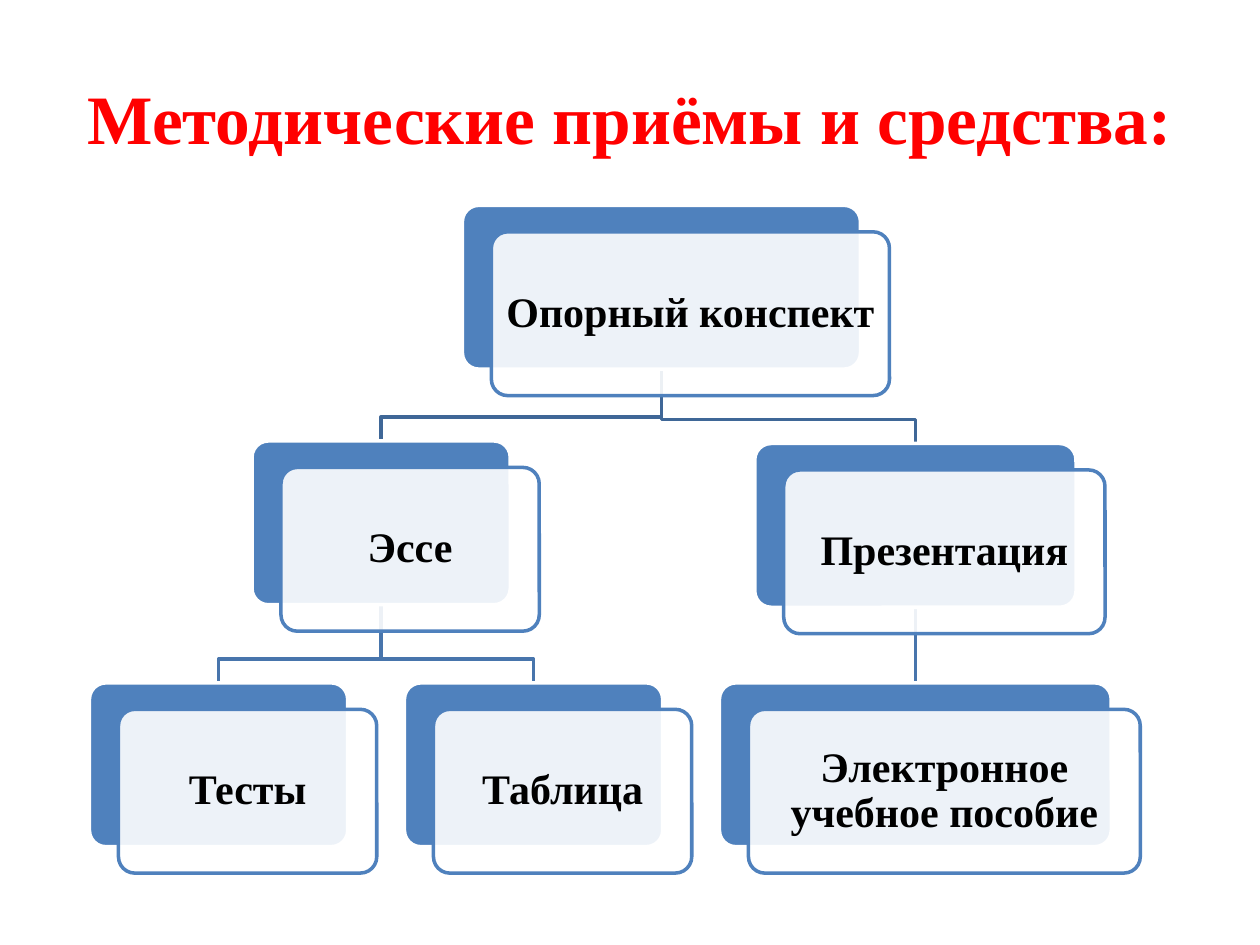
from lxml import etree
from pptx import Presentation
from pptx.dml.color import RGBColor
from pptx.enum.shapes import MSO_CONNECTOR, MSO_SHAPE
from pptx.enum.text import MSO_ANCHOR, MSO_AUTO_SIZE, PP_ALIGN
from pptx.oxml.ns import qn
from pptx.util import Inches, Pt

COLORS = {"title": "FF0000", "text": "000000", "box": "4F81BD", "white": "FFFFFF",
          "upper_link": "3F6797", "lower_link": "4875AC"}
BOX_HEIGHT = 1.3
CARD_SHIFT = 0.23, 0.21
ELBOW_RISE = 0.19

# name: (text, left, top, width)
nodes = {
    "summary": ("Опорный конспект", 3.67, 1.63, 3.16),
    "essay": ("Эссе", 2, 3.5, 2.05),
    "tests": ("Тесты", 0.71, 5.42, 2.05),
    "table": ("Таблица", 3.21, 5.42, 2.05),
    "presentation": ("Презентация", 5.99, 3.52, 2.55),
    "manual": ("Электронное учебное пособие", 5.71, 5.42, 3.11),
}
links = [
    ("presentation", "manual", "lower_link"),
    ("summary", "presentation", "upper_link"),
    ("essay", "table", "lower_link"),
    ("essay", "tests", "lower_link"),
    ("summary", "essay", "upper_link"),
]

prs = Presentation()
prs.slide_width, prs.slide_height = Inches(10), Inches(7.5)
slide = prs.slides.add_slide(prs.slide_layouts[5])
shapes = slide.shapes


def write(shape, text, size, color, margin, line_spacing):
    frame = shape.text_frame
    frame.text = text
    frame_format = {"word_wrap": True, "auto_size": MSO_AUTO_SIZE.NONE,
                    "vertical_anchor": MSO_ANCHOR.MIDDLE,
                    "margin_left": Inches(margin), "margin_right": Inches(margin)}
    for name, value in frame_format.items():
        setattr(frame, name, value)
    paragraph = frame.paragraphs[0]
    paragraph.alignment = PP_ALIGN.CENTER
    paragraph.line_spacing = line_spacing
    font = paragraph.runs[0].font
    for name, value in {"name": "Times New Roman", "size": Pt(size), "bold": True}.items():
        setattr(font, name, value)
    font.color.rgb = RGBColor.from_string(COLORS[color])


def add_box(left, top, width, fill, line):
    box = shapes.add_shape(MSO_SHAPE.ROUNDED_RECTANGLE, Inches(left), Inches(top),
                           Inches(width), Inches(BOX_HEIGHT))
    box.adjustments[0] = 0.1
    box.shadow.inherit = False
    box.fill.solid()
    box.fill.fore_color.rgb = RGBColor.from_string(COLORS[fill])
    box.line.color.rgb = RGBColor.from_string(COLORS[line])
    box.line.width = Pt(2)
    return box


title = shapes.title
title_place = {"left": 0.5, "top": 0.3, "width": 9, "height": 1.25}
for side, length in title_place.items():
    setattr(title, side, Inches(length))
write(title, "Методические приёмы и средства:", 39.6, "title", 0.1, 1.0)

for parent, child, color in links:
    _, parent_left, parent_top, parent_width = nodes[parent]
    _, child_left, child_top, child_width = nodes[child]
    start_x = Inches(parent_left + parent_width / 2)
    start_y = Inches(parent_top + BOX_HEIGHT)
    end_x = Inches(child_left + child_width / 2)
    end_y = Inches(child_top)
    if abs(end_x - start_x) < Inches(0.02):
        link = shapes.add_connector(MSO_CONNECTOR.STRAIGHT, start_x, start_y, start_x, end_y)
        etree.SubElement(link._element.spPr, qn("a:effectLst"))
    else:
        elbow_y = Inches(child_top - ELBOW_RISE)
        route = shapes.build_freeform(start_x, start_y)
        route.add_line_segments([(start_x, elbow_y), (end_x, elbow_y), (end_x, end_y)],
                                close=False)
        link = route.convert_to_shape()
        link.fill.background()
        link.shadow.inherit = False
    link.line.color.rgb = RGBColor.from_string(COLORS[color])
    link.line.width = Pt(2)

for text, left, top, width in nodes.values():
    add_box(left, top, width, "box", "white")
    card = add_box(left + CARD_SHIFT[0], top + CARD_SHIFT[1], width, "white", "box")
    card_color = card._element.spPr.find(qn("a:solidFill"))[0]
    etree.SubElement(card_color, qn("a:alpha"), val="90000")
    write(card, text, 24, "text", 0.05, 0.9)

prs.save("out.pptx")
